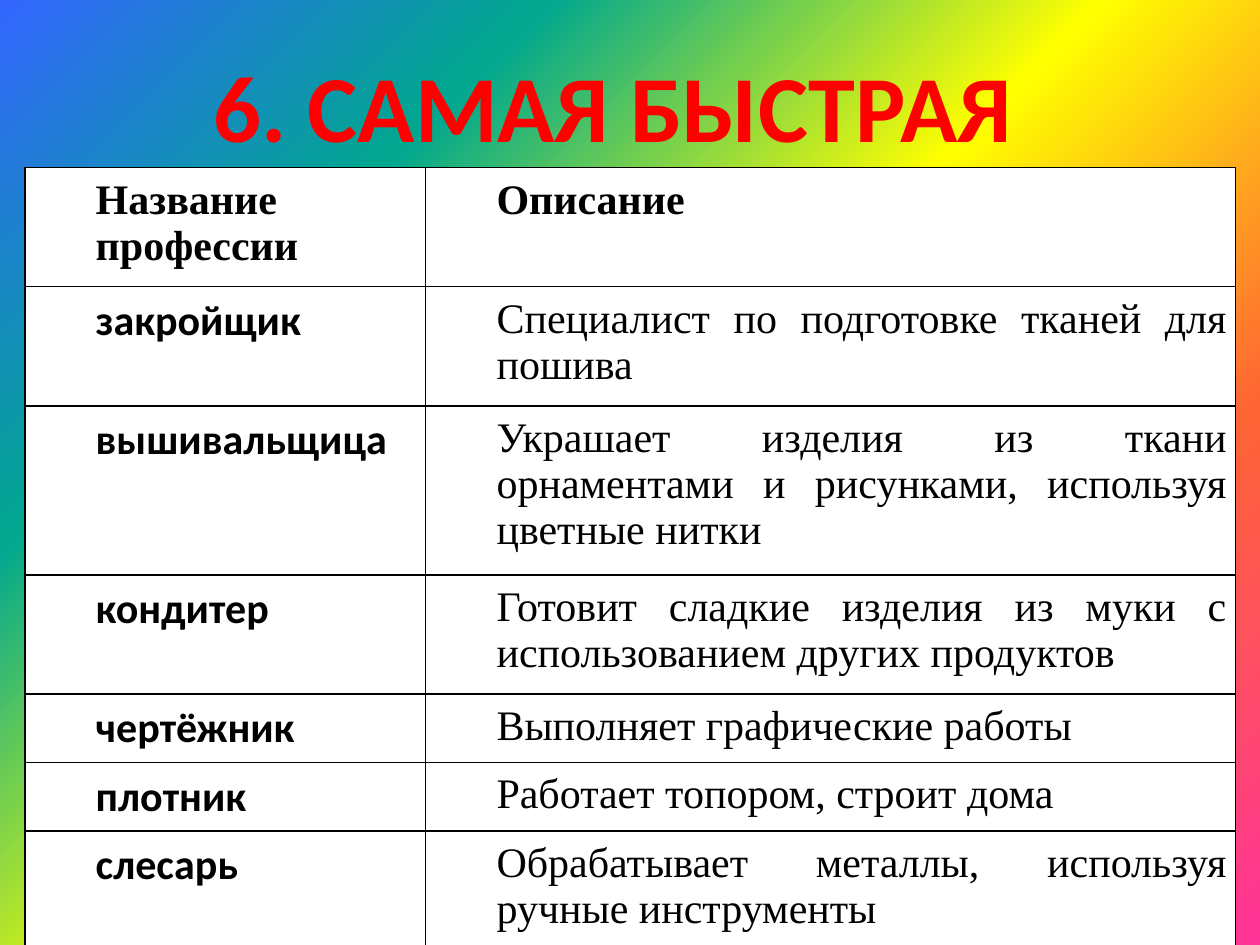
import pptx
import pptx.dml.color
import pptx.enum.shapes
import pptx.enum.text
import pptx.oxml
import pptx.oxml.ns
import pptx.util

Cm = pptx.util.Cm
Pt = pptx.util.Pt
ALIGN = pptx.enum.text.PP_ALIGN
SERIF = "Times New Roman"
SANS = "Calibri"

STOPS = ["FF3399", "FF6633", "FFFF00", "01A78F", "3366FF"]
HEAD = ("Название профессии", "Описание")
JOBS = [
    ("закройщик", "Специалист по подготовке тканей для пошива"),
    ("вышивальщица", "Украшает изделия из ткани орнаментами и рисунками, "
                     "используя цветные нитки"),
    ("кондитер", "Готовит сладкие изделия из муки с использованием "
                 "других продуктов"),
    ("чертёжник", "Выполняет графические работы"),
    ("плотник", "Работает топором, строит дома"),
    ("слесарь", "Обрабатывает металлы, используя ручные инструменты"),
]
COLS = [8.08, 16.33]
ROWS = [2.4, 2.4, 3.4, 2.4, 1.38, 1.38, 2.4]


def color(code):
    return pptx.dml.color.RGBColor.from_string(code)


def parse_xml(tag, attrs, body):
    space = pptx.oxml.ns.nsdecls("a", "p")
    return pptx.oxml.parse_xml(f"<{tag} {space} {attrs}>{body}</{tag}>")


def solid(code):
    return f'<a:solidFill><a:srgbClr val="{code}"/></a:solidFill>'


def put_text(frame, text, size=24, font=SERIF, ink="000000", bold=False,
             align=ALIGN.JUSTIFY, indent=0):
    """Write one formatted paragraph and return its run."""
    frame.word_wrap = True
    para = frame.paragraphs[0]
    para.alignment = align
    if indent:
        props = para._p.get_or_add_pPr()
        props.set("marL", str(Cm(indent)))
        props.set("indent", "0")
    run = para.add_run()
    run.text = text
    run.font.size = Pt(size)
    run.font.name = font
    run.font.bold = bold
    run.font.color.rgb = color(ink)
    return run


def add_back(slide):
    """Rainbow gradient spreading from the lower right corner."""
    step = 100000 // (len(STOPS) - 1)
    stops = "".join(f'<a:gs pos="{i * step}"><a:srgbClr val="{code}"/></a:gs>'
                    for i, code in enumerate(STOPS))
    back = parse_xml("p:bg", "", (
        f"<p:bgPr><a:gradFill><a:gsLst>{stops}</a:gsLst>"
        '<a:path path="circle"><a:fillToRect l="100000" t="100000"/></a:path>'
        "</a:gradFill><a:effectLst/></p:bgPr>"))
    slide.element.cSld.insert(0, back)


def add_title(slide, text):
    tape = slide.shapes.add_shape(
        pptx.enum.shapes.MSO_SHAPE.FLOWCHART_PUNCHED_TAPE,
        Cm(3.96), Cm(0), Cm(16.79), Cm(4.24))
    tape.shadow.inherit = False
    tape.fill.background()
    tape.line.fill.background()
    tape.text_frame.auto_size = pptx.enum.text.MSO_AUTO_SIZE.SHAPE_TO_FIT_TEXT
    run = put_text(tape.text_frame, text, size=54, font=SANS, ink="FF0000",
                   bold=True, align=ALIGN.CENTER)
    # Thin outline around the letters
    edge = parse_xml("a:ln", f'w="{Pt(0.71)}"', solid("5E457C"))
    run.font._element.insert(0, edge)


def style_cell(cell):
    """White fill, equal margins and a black border on each side."""
    cell.margin_left = cell.margin_right = Cm(0.18)
    cell.margin_top = cell.margin_bottom = Cm(0.18)
    cell.fill.solid()
    cell.fill.fore_color.rgb = color("FFFFFF")
    props = cell._tc.get_or_add_tcPr()
    for i, side in enumerate("LRTB"):
        edge = parse_xml(f"a:ln{side}", f'w="{Pt(1)}"', solid("000000"))
        props.insert(i, edge)


def add_grid(slide, rows):
    grid = slide.shapes.add_table(
        len(rows), len(COLS), Cm(0.5), Cm(3.38),
        Cm(sum(COLS)), Cm(sum(ROWS))).table
    grid.first_row = grid.horz_banding = False
    for col, width in zip(grid.columns, COLS):
        col.width = Cm(width)
    for row, height in zip(grid.rows, ROWS):
        row.height = Cm(height)
    for r, texts in enumerate(rows):
        for c, text in enumerate(texts):
            cell = grid.cell(r, c)
            style_cell(cell)
            # Job names are sans; the heading row is serif
            put_text(cell.text_frame, text, indent=1.25,
                     font=SANS if r and c == 0 else SERIF,
                     bold=r == 0 or c == 0)


def main():
    deck = pptx.Presentation()
    deck.slide_width, deck.slide_height = Cm(25.4), Cm(19.05)
    slide = deck.slides.add_slide(deck.slide_layouts[6])
    add_back(slide)
    add_title(slide, "6. САМАЯ БЫСТРАЯ")
    add_grid(slide, [HEAD] + JOBS)
    deck.save("out.pptx")


if __name__ == "__main__":
    main()
